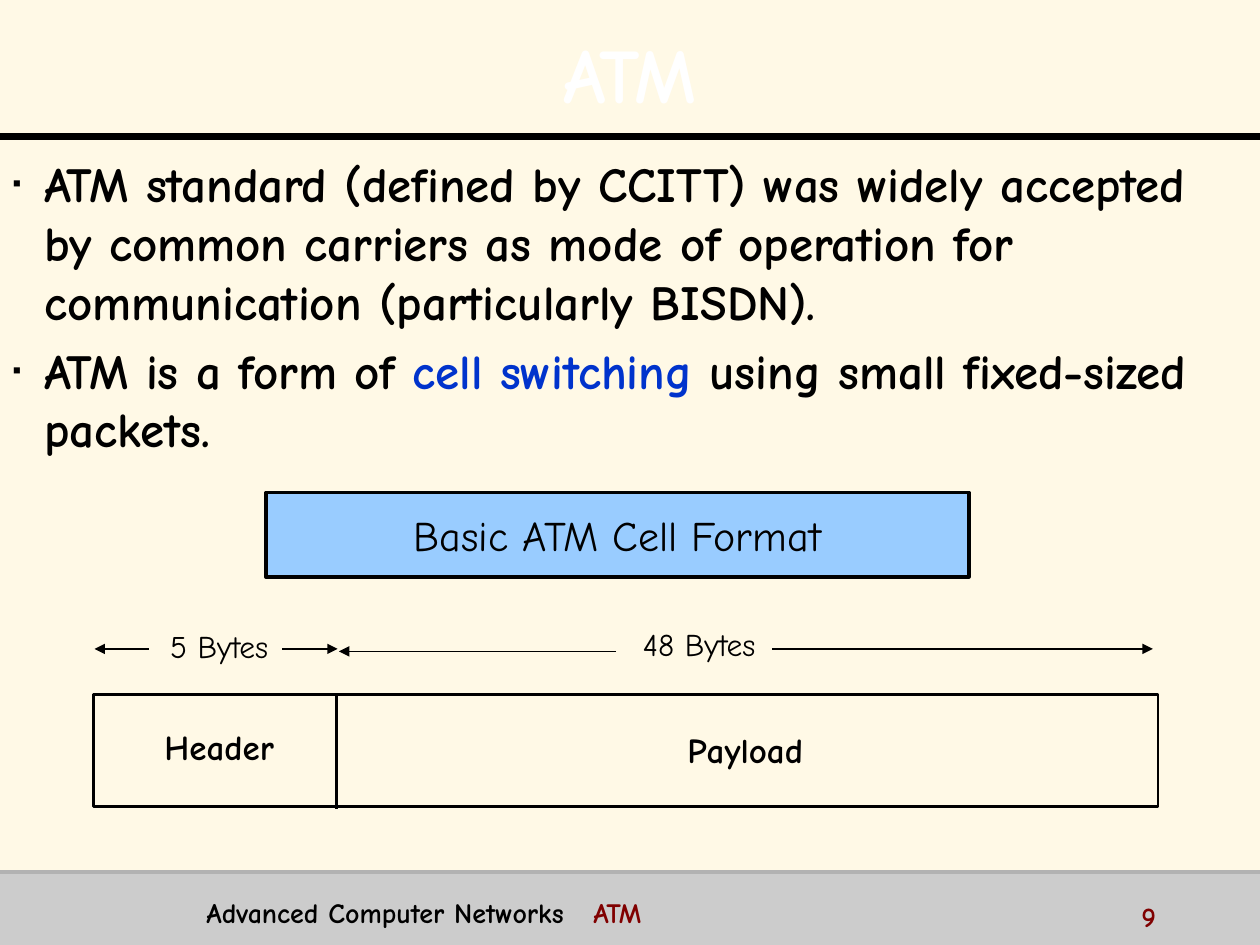
"""Build the slide that introduces ATM and its basic cell format."""
import dataclasses

import pptx
import pptx.dml.color
import pptx.enum.shapes
import pptx.enum.text
import pptx.oxml
import pptx.oxml.ns
import pptx.util

Inches = pptx.util.Inches
Pt = pptx.util.Pt
Align = pptx.enum.text.PP_ALIGN
Anchor = pptx.enum.text.MSO_ANCHOR
MARGINS = ("margin_left", "margin_top", "margin_right", "margin_bottom")


@dataclasses.dataclass(frozen=True)
class Theme:
    """Colours, font and type sizes of the slide."""

    font: str = "Comic Neue"
    paper: str = "FFF9E6"
    ink: str = "000000"
    white: str = "FFFFFF"
    term: str = "0033CC"
    accent: str = "800000"
    banner: str = "99CCFF"
    footer: str = "CCCCCC"
    footer_rule: str = "B2B2B2"
    title_size: int = 44
    body_size: int = 28
    banner_size: int = 24
    field_size: int = 20
    bytes_size: int = 18
    footer_size: int = 16


THEME = Theme()


def rgb(value):
    """Turn a hex string into a colour."""
    return pptx.dml.color.RGBColor.from_string(value)


def apply(target, values):
    """Set every attribute in a dict of format values."""
    for name, value in values.items():
        setattr(target, name, value)


def xml(tag, content=""):
    """Make a DrawingML element from its tag with attributes and its content."""
    name = tag.split()[0]
    return pptx.oxml.parse_xml(
        f"<a:{tag} {pptx.oxml.ns.nsdecls('a')}>{content}</a:{name}>")


def place(shape, box):
    """Move and size a shape in inches."""
    apply(shape, dict(zip(("left", "top", "width", "height"), map(Inches, box))))


def add_run(paragraph, text, size, color=THEME.ink, bold=True):
    """Add a formatted run of text."""
    run = paragraph.add_run()
    run.text = text
    apply(run.font, {"name": THEME.font, "size": Pt(size), "bold": bold})
    run.font.color.rgb = rgb(color)
    return run


def add_rect(slide, box, fill=None, line=None, width=0):
    """Add a rectangle with an optional fill and outline."""
    rect = slide.shapes.add_shape(
        pptx.enum.shapes.MSO_SHAPE.RECTANGLE, *map(Inches, box))
    rect.shadow.inherit = False
    if fill:
        rect.fill.solid()
        rect.fill.fore_color.rgb = rgb(fill)
    else:
        rect.fill.background()
    if line:
        rect.line.color.rgb = rgb(line)
        rect.line.width = Pt(width)
    else:
        rect.line.fill.background()
    return rect


def add_line(slide, start, end, width, color=THEME.ink, arrow=False):
    """Add a straight line, with an arrowhead at its end if asked."""
    line = slide.shapes.add_connector(
        pptx.enum.shapes.MSO_CONNECTOR.STRAIGHT, *map(Inches, start + end))
    line.line.color.rgb = rgb(color)
    line.line.width = Pt(width)
    if arrow:
        line.line._get_or_add_ln().append(xml('tailEnd type="triangle"'))
    line._element.spPr.append(xml("effectLst"))


def add_label(slide, box, text, size, bold):
    """Add a centred label without margins."""
    label = slide.shapes.add_textbox(*map(Inches, box)).text_frame
    apply(label, {"word_wrap": True, **dict.fromkeys(MARGINS, 0)})
    label.paragraphs[0].alignment = Align.CENTER
    add_run(label.paragraphs[0], text, size, bold=bold)


def add_footer_text(slide, box, parts, tab=None):
    """Add a footer line of coloured parts, with an optional tab stop."""
    footer = slide.shapes.add_textbox(*map(Inches, box)).text_frame
    footer.word_wrap = True
    paragraph = footer.paragraphs[0]
    if tab:
        stop = f'<a:tab pos="{Inches(tab)}" algn="l"/>'
        paragraph._p.get_or_add_pPr().append(xml("tabLst", stop))
    for text, color in parts:
        add_run(paragraph, text, THEME.footer_size, color)


def fill_title(title, text):
    """Write the title in white with a dark text shadow."""
    place(title, (0.75, 0.08, 8.5, 0.92))
    apply(title.text_frame, {"vertical_anchor": Anchor.MIDDLE,
                             "auto_size": pptx.enum.text.MSO_AUTO_SIZE.NONE})
    paragraph = title.text_frame.paragraphs[0]
    apply(paragraph, {"alignment": Align.CENTER, "line_spacing": 1.1})
    run = add_run(paragraph, text, THEME.title_size, THEME.white)
    shadow = (f'<a:outerShdw dist="{Pt(2.5)}" dir="2700000">'
              f'<a:srgbClr val="{THEME.ink}"/></a:outerShdw>')
    fill = run._r.rPr.find(pptx.oxml.ns.qn("a:solidFill"))
    fill.addnext(xml("effectLst", shadow))


def fill_body(body, items):
    """Write bulleted items, each a list of text and colour pairs."""
    place(body, (0, 1.17, 10, 2.81))
    frame = body.text_frame
    frame.auto_size = pptx.enum.text.MSO_AUTO_SIZE.NONE
    for index, parts in enumerate(items):
        paragraph = frame.add_paragraph() if index else frame.paragraphs[0]
        properties = paragraph._p.get_or_add_pPr()
        properties.set("marL", str(Inches(0.25)))
        properties.set("indent", str(-Inches(0.25)))
        properties.append(xml("buClr", f'<a:srgbClr val="{THEME.ink}"/>'))
        properties.append(xml('buSzPct val="50000"'))
        properties.append(xml('buChar char="▪"'))
        paragraph.space_before = Pt(0.2 * THEME.body_size if index else 0)
        for text, color in parts:
            add_run(paragraph, text, THEME.body_size, color)


def add_cell_diagram(slide):
    """Draw the cell with its two fields and their lengths."""
    add_rect(slide, (0.74, 5.51, 8.45, 0.89), line=THEME.ink, width=1.5)
    add_line(slide, (2.67, 5.5), (2.67, 6.42), 1.5)
    for box, text in (((1.17, 5.76, 1.14, 0.34), "Header"),
                      ((5.2, 5.78, 1.43, 0.34), "Payload")):
        add_label(slide, box, text, THEME.field_size, True)
    for box, text in (((1.17, 4.98, 1.14, 0.3), "5 Bytes"),
                      ((4.98, 4.96, 1.14, 0.3), "48 Bytes")):
        add_label(slide, box, text, THEME.bytes_size, False)
    for start, end, y in ((2.24, 2.68, 5.15), (1.18, 0.75, 5.15),
                          (4.89, 2.69, 5.17), (6.13, 9.15, 5.15)):
        add_line(slide, (start, y), (end, y), 0.75, arrow=True)


def add_banner(slide, text):
    """Add the heading box of the diagram."""
    banner = add_rect(slide, (2.11, 3.91, 5.58, 0.67), THEME.banner, THEME.ink, 2)
    apply(banner.text_frame, {"vertical_anchor": Anchor.MIDDLE, "word_wrap": False})
    banner.text_frame.paragraphs[0].alignment = Align.CENTER
    add_run(banner.text_frame.paragraphs[0], text, THEME.banner_size, bold=False)


def main():
    """Build and save the slide."""
    deck = pptx.Presentation()
    apply(deck, {"slide_width": Inches(10), "slide_height": Inches(7.5)})
    slide = deck.slides.add_slide(deck.slide_layouts[1])
    slide.background.fill.solid()
    slide.background.fill.fore_color.rgb = rgb(THEME.paper)
    add_rect(slide, (0, 6.92, 10, 0.58), THEME.footer)
    add_line(slide, (0, 1.08), (10, 1.08), 4)
    add_line(slide, (0, 6.92), (10, 6.92), 2, THEME.footer_rule)
    fill_title(slide.shapes.title, "ATM")
    fill_body(slide.placeholders[1], [
        [("ATM standard (defined by CCITT) was widely accepted by common carriers "
          "as mode of operation for communication (particularly BISDN).", THEME.ink)],
        [("ATM is a form of ", THEME.ink), ("cell switching ", THEME.term),
         ("using small fixed-sized packets.", THEME.ink)],
    ])
    add_cell_diagram(slide)
    add_banner(slide, "Basic ATM Cell Format")
    add_footer_text(slide, (1.54, 7.06, 7.28, 0.31),
                    [("Advanced Computer Networks\t", THEME.ink),
                     ("ATM", THEME.accent)], tab=3.07)
    add_footer_text(slide, (8.96, 7.09, 1, 0.25), [("9", THEME.accent)])
    deck.save("out.pptx")


if __name__ == "__main__":
    main()
